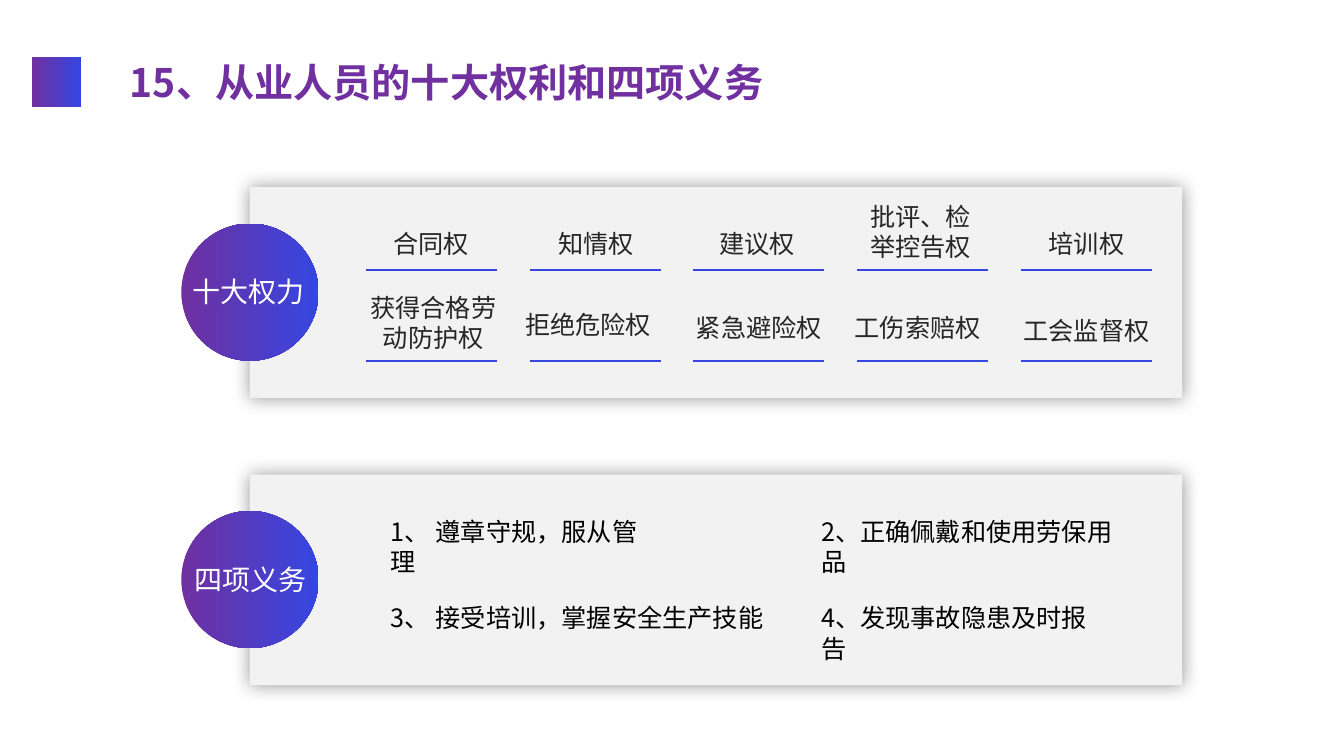
from lxml.etree import SubElement
from pptx import Presentation
from pptx.dml.color import RGBColor
from pptx.enum.shapes import MSO_CONNECTOR, MSO_SHAPE
from pptx.enum.text import PP_ALIGN
from pptx.oxml.ns import qn
from pptx.util import Pt

FONT = "Noto Sans CJK SC"
PURPLE, BLUE, PANEL, INK = "7030A0", "3546E1", "F2F2F2", "262626"

# Each right: text, shift of its centre from the column centre, top in panel, wraps
RIGHTS = [
    [("合同权", 0, 26, False), ("知情权", 0.7, 26, False),
     ("建议权", -1.4, 26, False), ("批评、检举控告权", -1.4, 6.5, True),
     ("培训权", 0, 26, False)],
    [("获得合格劳动防护权", 1.4, 71.3, True), ("拒绝危险权", -5, 83.5, False),
     ("紧急避险权", 0, 85.7, False), ("工伤索赔权", -3.6, 85.7, False),
     ("工会监督权", 0, 87.9, False)],
]
# Each duty: text, box width
DUTIES = [
    [("1、 遵章守规，服从管理", 205), ("2、正确佩戴和使用劳保用品", 237)],
    [("3、 接受培训，掌握安全生产技能", 295), ("4、发现事故隐患及时报告", 220)],
]


def rgb(color):
    return RGBColor.from_string(color)


def add_text(s, text, x, y, w, h, size=18, color=INK, bold=False,
             align=PP_ALIGN.LEFT, wrap=False):
    tf = s.shapes.add_textbox(Pt(x), Pt(y), Pt(w), Pt(h)).text_frame
    tf.word_wrap = wrap
    p = tf.paragraphs[0]
    p.alignment = align
    r = p.add_run()
    r.text = text
    r.font.size, r.font.bold, r.font.name = Pt(size), bold, FONT
    r.font.color.rgb = rgb(color)
    SubElement(r.font._element, qn("a:ea"), typeface=FONT)


def add_block(s, kind, x, y, w, h, colors):
    """Solid for one colour, left-to-right gradient for two."""
    sp = s.shapes.add_shape(kind, Pt(x), Pt(y), Pt(w), Pt(h))
    sp.shadow.inherit = False
    sp.line.fill.background()
    if len(colors) == 1:
        sp.fill.solid()
        sp.fill.fore_color.rgb = rgb(colors[0])
    else:
        sp.fill.gradient()
        sp.fill.gradient_angle = 0
        for stop, color, pos in zip(sp.fill.gradient_stops, colors, (0, 1)):
            stop.color.rgb, stop.position = rgb(color), pos
    return sp


def add_glow(sp, blur=13, alpha=40):
    effects = sp._element.spPr.find(qn("a:effectLst"))
    shadow = SubElement(effects, qn("a:outerShdw"), blurRad=str(Pt(blur)),
                        dist="0", dir="0", algn="ctr", rotWithShape="0")
    clr = SubElement(shadow, qn("a:srgbClr"), val="000000")
    SubElement(clr, qn("a:alpha"), val=str(alpha * 1000))


def add_rule(s, x, y, w):
    line = s.shapes.add_connector(MSO_CONNECTOR.STRAIGHT,
                                  Pt(x), Pt(y), Pt(x + w), Pt(y))
    line.line.color.rgb = rgb(BLUE)
    line.line.width = Pt(1.75)
    SubElement(line._element.spPr, qn("a:effectLst"))


def title_bar(s, x, y, text):
    add_block(s, MSO_SHAPE.RECTANGLE, x, y, 34.6, 35.2, (PURPLE, BLUE))
    add_text(s, text, x + 62.7, y - 3, 474, 41, size=28, color=PURPLE, bold=True)


def panel(s, x, y, w, h, label, label_dx):
    add_glow(add_block(s, MSO_SHAPE.RECTANGLE, x, y, w, h, (PANEL,)))
    d = 98
    add_block(s, MSO_SHAPE.OVAL, x - d / 2, y + 26, d, d, (PURPLE, BLUE))
    add_text(s, label, x - 47.5 + label_dx, y + 59, 95, 32, size=20,
             color="FFFFFF", align=PP_ALIGN.CENTER)


def rights_panel(s, x, y, w, h):
    panel(s, x, y, w, h, "十大权力", -1)
    rule_w, pitch = 93.6, 117
    for row, rights in enumerate(RIGHTS):
        for col, (text, dx, top, wrap) in enumerate(rights):
            left = x + 82.8 + col * pitch
            add_rule(s, left, y + 59.2 + row * 64.8, rule_w)
            # Wrapped labels hold four or five characters a line
            box_w = 94 if text.startswith("批评") else 105.5
            add_text(s, text, left + (rule_w - box_w) / 2 + dx, y + top,
                     box_w, 51 if wrap else 29, align=PP_ALIGN.CENTER, wrap=wrap)


def duties_panel(s, x, y, w, h):
    panel(s, x, y, w, h, "四项义务", 0.7)
    for row, duties in enumerate(DUTIES):
        for col, (text, box_w) in enumerate(duties):
            add_text(s, text, x + 93.6 + col * 307.4, y + 26 + row * 62,
                     box_w, 29, color="000000", wrap=True)


def main():
    prs = Presentation()
    prs.slide_width, prs.slide_height = Pt(960), Pt(540)
    s = prs.slides.add_slide(prs.slide_layouts[6])
    title_bar(s, 23, 41, "15、从业人员的十大权利和四项义务")
    rights_panel(s, 178.5, 133.7, 666, 150.5)
    duties_panel(s, 178.5, 339, 666, 150.5)
    prs.save("out.pptx")


if __name__ == "__main__":
    main()
